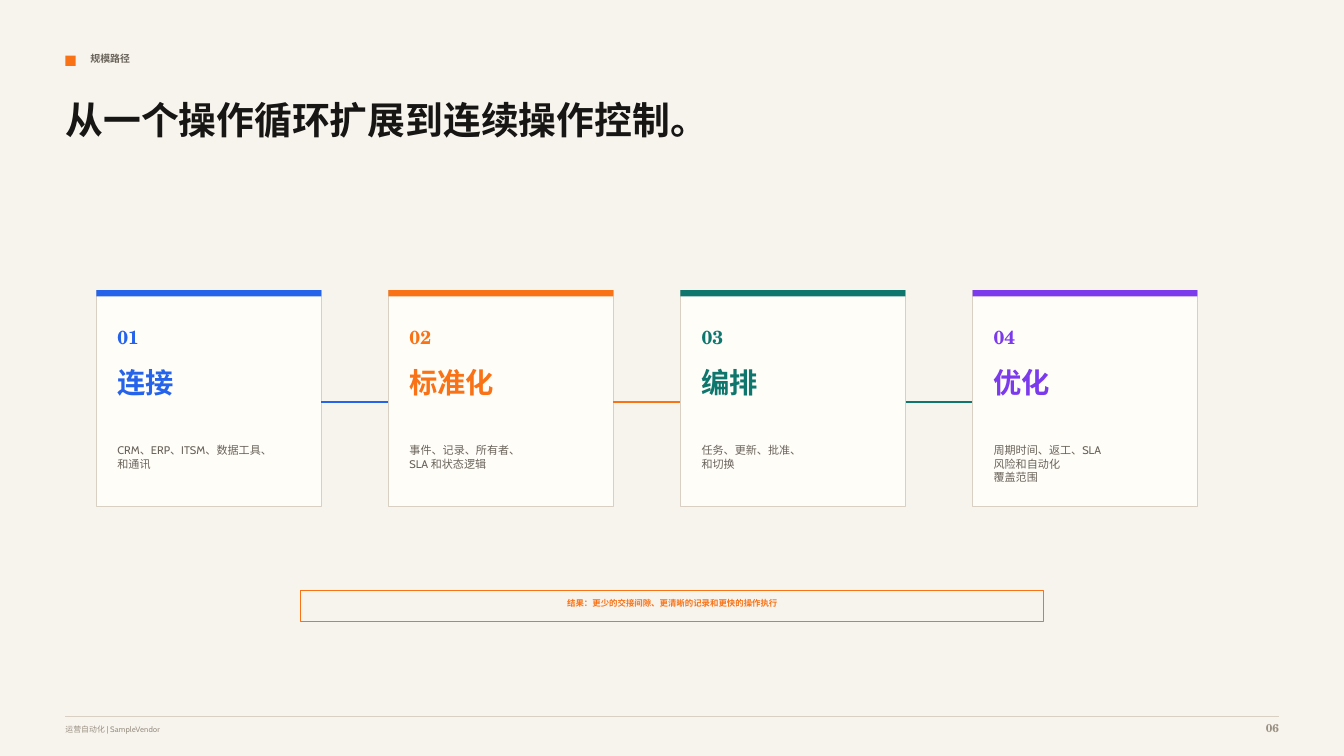
from lxml.etree import SubElement
from pptx import Presentation
from pptx.dml.color import RGBColor
from pptx.enum.shapes import MSO_CONNECTOR, MSO_SHAPE
from pptx.enum.text import PP_ALIGN
from pptx.oxml.ns import qn
from pptx.util import Cm, Pt

COLORS = {
    "paper": "F7F4EE", "card": "FFFDF8", "border": "D9D0C3",
    "ink": "171614", "muted": "69635A", "footer": "9A9184",
    "blue": "2563EB", "orange": "F97316", "green": "0F766E", "violet": "7C3AED",
}
SANS = "Cabin"
SERIF = "TeX Gyre Schola"

STAGES = [
    ("连接", "blue", ["CRM、ERP、ITSM、数据工具、", "和通讯"]),
    ("标准化", "orange", ["事件、记录、所有者、", "SLA 和状态逻辑"]),
    ("编排", "green", ["任务、更新、批准、", "和切换"]),
    ("优化", "violet", ["周期时间、返工、SLA", "风险和自动化", "覆盖范围"]),
]

MARGIN = 1.65
RIGHT_EDGE = 32.23
CARD_LEFT, CARD_TOP = 2.43, 7.31
CARD_WIDTH, CARD_HEIGHT = 5.67, 5.46
CARD_PITCH = 7.36
CARD_PADDING = 0.53
LINK_Y = 10.13


class SlideBuilder:
    def __init__(self, slide):
        self.slide = slide
        self.slide.background.fill.solid()
        self.slide.background.fill.fore_color.rgb = self.color("paper")

    def color(self, name):
        return RGBColor.from_string(COLORS[name])

    def box(self, left, top, width, height, fill=None, border=None):
        shape = self.slide.shapes.add_shape(
            MSO_SHAPE.RECTANGLE, Cm(left), Cm(top), Cm(width), Cm(height))
        shape.shadow.inherit = False
        if fill:
            shape.fill.solid()
            shape.fill.fore_color.rgb = self.color(fill)
        else:
            shape.fill.background()
        if border:
            shape.line.color.rgb = self.color(border)
            shape.line.width = Pt(0.75)
        else:
            shape.line.fill.background()

    def rule(self, left, right, y, color, weight):
        line = self.slide.shapes.add_connector(
            MSO_CONNECTOR.STRAIGHT, Cm(left), Cm(y), Cm(right), Cm(y))
        line.line.color.rgb = self.color(color)
        line.line.width = Pt(weight)
        SubElement(line._element.spPr, qn("a:effectLst"))

    def text(self, left, top, width, height, lines, size, color,
             font=SANS, bold=False, align=PP_ALIGN.LEFT):
        frame = self.slide.shapes.add_textbox(
            Cm(left), Cm(top), Cm(width), Cm(height)).text_frame
        frame.word_wrap = True
        frame.margin_left = frame.margin_right = 0
        frame.margin_top = frame.margin_bottom = 0
        for index, line in enumerate(lines):
            paragraph = frame.add_paragraph() if index else frame.paragraphs[0]
            paragraph.alignment = align
            run = paragraph.add_run()
            run.text = line
            run.font.name = font
            run.font.size = Pt(size)
            run.font.bold = bold
            run.font.color.rgb = self.color(color)

    def stage(self, index, name, color, details):
        left = CARD_LEFT + index * CARD_PITCH
        inner = left + CARD_PADDING
        self.box(left, CARD_TOP, CARD_WIDTH, CARD_HEIGHT, "card", "border")
        self.box(left, CARD_TOP, CARD_WIDTH, 0.16, color)
        self.text(inner, 8.2, 1.17, 0.64, [f"{index + 1:02}"], 13.5, color, SERIF, True)
        self.text(inner, 9.2, 4.24, 1.17, [name], 20.2, color, SERIF, True)
        self.text(inner, 11.18, 4.4, 1.17, details, 7.9, "muted")
        if index < len(STAGES) - 1:
            self.rule(left + CARD_WIDTH, left + CARD_PITCH, LINK_Y, color, 1.5)


def main():
    deck = Presentation()
    deck.slide_width, deck.slide_height = Cm(33.87), Cm(19.05)
    builder = SlideBuilder(deck.slides.add_slide(deck.slide_layouts[6]))

    builder.box(MARGIN, 1.4, 0.26, 0.26, "orange")
    builder.text(2.28, 1.32, 16.4, 0.48, ["规模路径"], 7.1, "muted", bold=True)
    builder.text(MARGIN, 2.44, 25.15, 2.6, ["从一个操作循环扩展到连续操作控制。"],
                 27, "ink", SERIF, True)

    for index, (name, color, details) in enumerate(STAGES):
        builder.stage(index, name, color, details)

    builder.box(7.57, 14.87, 18.74, 0.8, border="orange")
    builder.text(7.89, 15.08, 18.1, 0.36,
                 ["结果：更少的交接间隙、更清晰的记录和更快的操作执行"],
                 6, "orange", bold=True, align=PP_ALIGN.CENTER)

    builder.rule(MARGIN, RIGHT_EDGE, 18.05, "border", 0.75)
    builder.text(MARGIN, 18.26, 20.12, 0.38, ["运营自动化 | SampleVendor"], 5.6, "footer")
    builder.text(RIGHT_EDGE - 1.27, 18.16, 1.27, 0.48, ["06"], 8.2, "footer",
                 SERIF, True, PP_ALIGN.RIGHT)

    deck.save("out.pptx")


if __name__ == "__main__":
    main()
